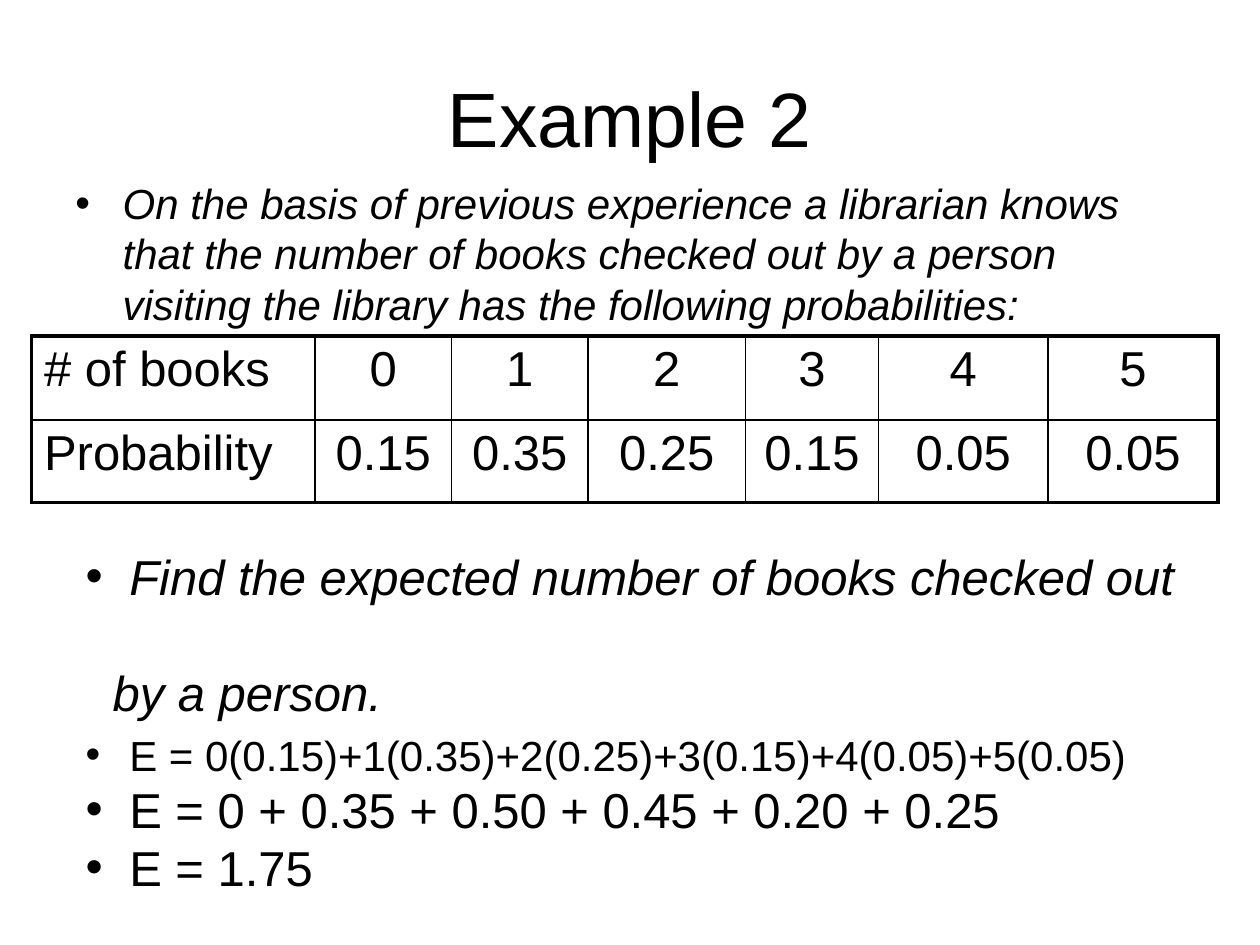
from dataclasses import dataclass

from lxml.etree import SubElement
from pptx import Presentation
from pptx.dml.color import RGBColor
from pptx.enum.text import MSO_ANCHOR, PP_ALIGN
from pptx.oxml.ns import qn
from pptx.util import Pt

BLACK = RGBColor(0, 0, 0)
FACE = "Arial"
THICK, THIN = 2.25, 1


@dataclass
class Line:
    text: str
    size: float = 28
    slant: bool = False
    bullet: bool = True
    left: float = 25
    hang: float = 25
    pitch: float = 33.3
    before: float = 0


def style(para, size: float, slant: bool = False) -> None:
    font = para.font
    font.name, font.size, font.italic = FACE, Pt(size), slant
    font.bold = False
    font.color.rgb = BLACK


def write(para, line: Line) -> None:
    para.text = line.text
    para.alignment = PP_ALIGN.LEFT
    para.line_spacing = Pt(line.pitch)
    para.space_before = Pt(line.before)
    props = para._p.get_or_add_pPr()
    props.set("marL", str(Pt(line.left)))
    props.set("indent", str(-Pt(line.hang)))
    if line.bullet:
        points = 24 if line.pitch < 30 else 28
        SubElement(props, qn("a:buSzPts"), val=str(points * 100))
        SubElement(props, qn("a:buFont"), typeface=FACE)
        SubElement(props, qn("a:buChar"), char="•")
    style(para, line.size, line.slant)


def add_text(slide, box: tuple, lines: list[Line], top: float = 3.6) -> None:
    frame = slide.shapes.add_textbox(*map(Pt, box)).text_frame
    frame.word_wrap = True
    frame.margin_top = Pt(top)
    for index, line in enumerate(lines):
        para = frame.add_paragraph() if index else frame.paragraphs[0]
        write(para, line)


def add_edge(cell, side: str, width: float) -> None:
    props = cell._tc.get_or_add_tcPr()
    edge = SubElement(props, qn(f"a:ln{side}"), w=str(Pt(width)))
    fill = SubElement(edge, qn("a:solidFill"))
    SubElement(fill, qn("a:srgbClr"), val=str(BLACK))


def add_grid(slide, box: tuple, data: list, widths: list, heights: list) -> None:
    table = slide.shapes.add_table(len(data), len(widths), *map(Pt, box)).table
    table.first_row = table.horz_banding = False
    for col, width in zip(table.columns, widths):
        col.width = Pt(width)
    for row, height in zip(table.rows, heights):
        row.height = Pt(height)
    for down, row in enumerate(data):
        for across, text in enumerate(row):
            cell = table.cell(down, across)
            outer = {
                "L": across == 0,
                "R": across == len(row) - 1,
                "T": down == 0,
                "B": down == len(data) - 1,
            }
            for side, edge in outer.items():
                add_edge(cell, side, THICK if edge else THIN)
            cell.fill.background()
            para = cell.text_frame.paragraphs[0]
            para.text = text
            para.alignment = PP_ALIGN.CENTER if across else PP_ALIGN.LEFT
            style(para, 28)


def main() -> None:
    deck = Presentation()
    deck.slide_width, deck.slide_height = Pt(720), Pt(540)
    slide = deck.slides.add_slide(deck.slide_layouts[5])

    title = slide.shapes.title
    title.left, title.top, title.width, title.height = map(Pt, (36, 21.6, 648, 90))
    title.text_frame.text = "Example 2"
    title.text_frame.vertical_anchor = MSO_ANCHOR.MIDDLE
    head = title.text_frame.paragraphs[0]
    head.alignment = PP_ALIGN.CENTER
    style(head, 44)

    intro = Line(
        "On the basis of previous experience a librarian knows that the number "
        "of books checked out by a person visiting the library has the "
        "following probabilities:",
        size=24, slant=True, left=27, hang=27, pitch=28.8,
    )
    add_text(slide, (36, 95.8, 642, 126), [intro], top=5.6)

    data = [
        ["# of books", "0", "1", "2", "3", "4", "5"],
        ["Probability", "0.15", "0.35", "0.25", "0.15", "0.05", "0.05"],
    ]
    widths = [162, 78, 78, 90, 76, 97, 97]
    add_grid(slide, (18, 192, 678, 95), data, widths, [48, 47])

    steps = [
        Line("Find the expected number of books checked out", slant=True),
        Line("by a person.", slant=True, bullet=False, left=15.5, hang=0, before=33.3),
        Line("E = 0(0.15)+1(0.35)+2(0.25)+3(0.15)+4(0.05)+5(0.05)", size=24),
        Line("E = 0 + 0.35 + 0.50 + 0.45 + 0.20 + 0.25"),
        Line("E = 1.75"),
    ]
    add_text(slide, (41.8, 308.9, 648, 175.7), steps)
    deck.save("out.pptx")


if __name__ == "__main__":
    main()
